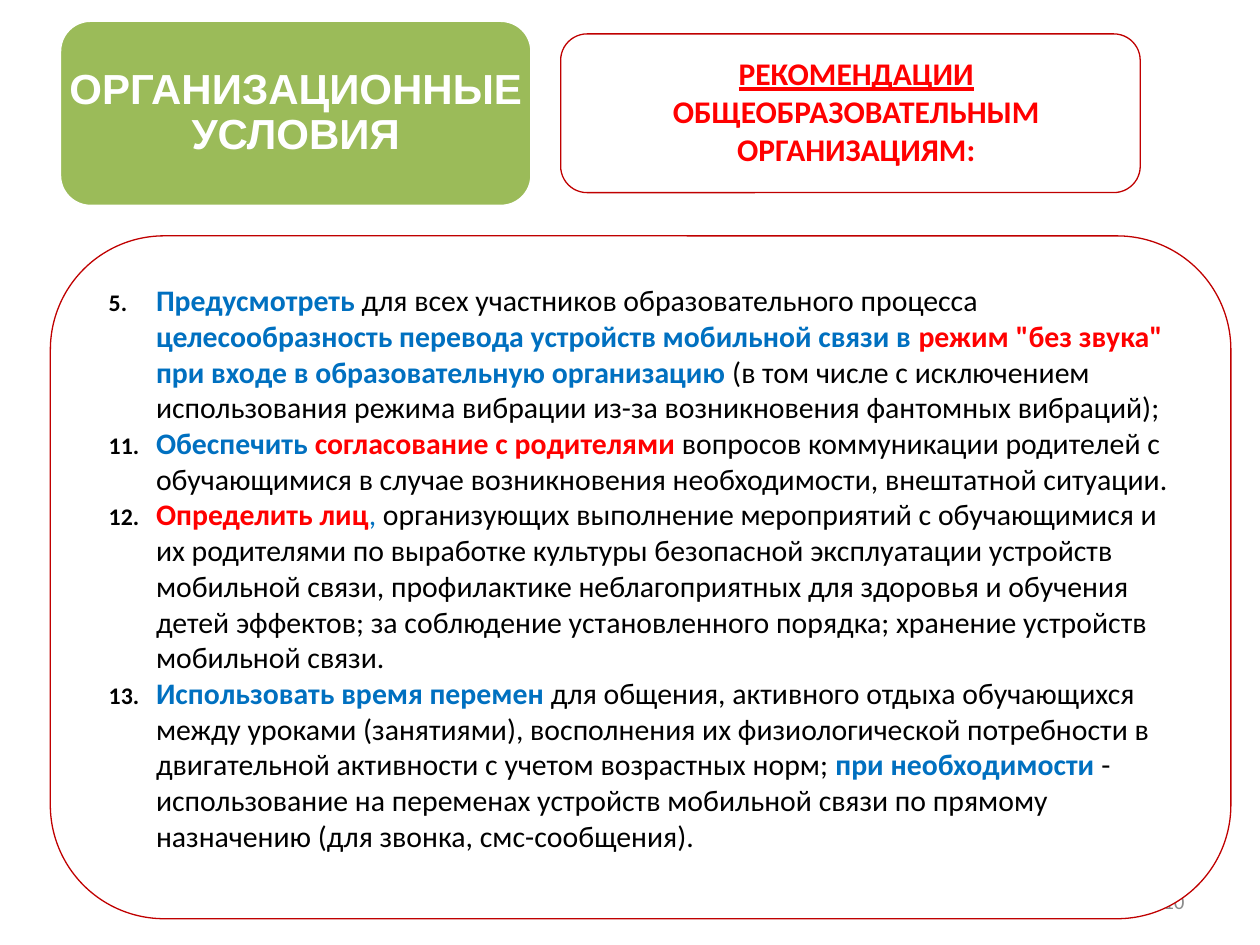
from lxml import etree
from pptx import Presentation
from pptx.dml.color import RGBColor
from pptx.enum import shapes, text
from pptx.oxml import ns
from pptx.util import Pt

COLORS = {"white": "FFFFFF", "green": "9BBB59", "border": "C00000", "red": "FF0000",
          "blue": "0070C0", "black": "000000", "gray": "8B8B8B"}
CORNER = 0.1667
CORNER_INSET = CORNER * 0.29289  # share of the short side lost to rounding
PANEL_MARGINS = (4.3, 7.2, 7.2, 3.6)

# Each item: first number, then (text, colour, bold) runs
RECOMMENDATIONS = [
    (5, [("Предусмотреть ", "blue", True),
         ("для всех участников образовательного процесса ", "black", False),
         ("целесообразность перевода устройств мобильной связи в ", "blue", True),
         ('режим "без звука"', "red", True),
         (" при входе в образовательную организацию ", "blue", True),
         ("(в том числе с исключением использования режима вибрации из-за "
          "возникновения фантомных вибраций);", "black", False)]),
    (11, [("Обеспечить ", "blue", True),
          ("согласование с родителями", "red", True),
          (" вопросов коммуникации родителей с обучающимися в случае возникновения "
           "необходимости, внештатной ситуации.", "black", False)]),
    (12, [("Определить лиц", "red", True),
          (",", "blue", False),
          (" организующих выполнение мероприятий с обучающимися и их родителями по "
           "выработке культуры безопасной эксплуатации устройств мобильной связи, "
           "профилактике неблагоприятных для здоровья и обучения детей эффектов; за "
           "соблюдение установленного порядка; хранение устройств мобильной связи.",
           "black", False)]),
    (12, [("Использовать время перемен ", "blue", True),
          ("для общения, активного отдыха обучающихся между уроками (занятиями), "
           "восполнения их физиологической потребности в двигательной активности с "
           "учетом возрастных норм; ", "black", False),
          ("при необходимости ", "blue", True),
          ("- использование на переменах устройств мобильной связи по прямому "
           "назначению (для звонка, смс-сообщения).", "black", False)]),
]


def rgb(color):
    return RGBColor.from_string(COLORS[color])


def apply(target, formats):
    for name, value in formats.items():
        setattr(target, name, value)


def set_frame(frame, margins, anchor):
    left, top, right, bottom = map(Pt, margins)
    apply(frame, {"margin_left": left, "margin_top": top, "margin_right": right,
                  "margin_bottom": bottom, "vertical_anchor": anchor,
                  "word_wrap": True, "auto_size": text.MSO_AUTO_SIZE.NONE})


def add_run(paragraph, wording, color, **formats):
    run = paragraph.add_run()
    run.text = wording
    apply(run.font, formats)
    run.font.color.rgb = rgb(color)


def add_panel(slide, box, fill, border, weight):
    panel = slide.shapes.add_shape(shapes.MSO_SHAPE.ROUNDED_RECTANGLE, *map(Pt, box))
    panel.adjustments[0] = CORNER
    panel.shadow.inherit = False
    panel.fill.solid()
    panel.fill.fore_color.rgb = rgb(fill)
    panel.line.color.rgb = rgb(border)
    panel.line.width = Pt(weight)
    return panel


def place_on_top(slide, placeholder, box, inset):
    """Put the placeholder in front, inset on every side of the box."""
    left, top, width, height = box
    apply(placeholder, {"left": Pt(left + inset), "top": Pt(top + inset),
                        "width": Pt(width - 2 * inset), "height": Pt(height - 2 * inset)})
    slide.shapes._spTree.append(placeholder._element)


def number_paragraph(paragraph, start):
    """Number from start; equal starts in a row keep counting."""
    props = paragraph._p.get_or_add_pPr()
    props.set("marL", str(Pt(37)))
    props.set("indent", str(Pt(-27)))
    bullet_color = etree.SubElement(props, ns.qn("a:buClr"))
    etree.SubElement(bullet_color, ns.qn("a:srgbClr"), val=COLORS["black"])
    etree.SubElement(props, ns.qn("a:buSzPct"), val="80000")
    etree.SubElement(props, ns.qn("a:buFont"), typeface="Calibri")
    etree.SubElement(props, ns.qn("a:buAutoNum"), type="arabicPeriod", startAt=str(start))


def add_page_number(slide, box):
    frame = slide.shapes.add_textbox(*map(Pt, box)).text_frame
    set_frame(frame, (7.2, 3.6, 7.2, 3.6), text.MSO_ANCHOR.MIDDLE)
    paragraph = frame.paragraphs[0]
    paragraph.alignment = text.PP_ALIGN.RIGHT
    add_run(paragraph, "10", "gray", name="Calibri", size=Pt(12))


def add_topic(slide, box):
    add_panel(slide, box, "green", "white", 2)
    title = slide.shapes.title
    place_on_top(slide, title, box, 3.6)
    set_frame(title.text_frame, (0.7,) * 4, text.MSO_ANCHOR.MIDDLE)
    paragraph = title.text_frame.paragraphs[0]
    apply(paragraph, {"alignment": text.PP_ALIGN.CENTER, "line_spacing": 0.9,
                      "space_after": Pt(8.4)})
    add_run(paragraph, "ОРГАНИЗАЦИОННЫЕ УСЛОВИЯ", "white",
            name="Arial", size=Pt(24), bold=True)


def add_audience(slide, box):
    frame = add_panel(slide, box, "white", "border", 0.75).text_frame
    set_frame(frame, PANEL_MARGINS, text.MSO_ANCHOR.TOP)
    paragraph = frame.paragraphs[0]
    paragraph.alignment = text.PP_ALIGN.CENTER
    paragraph._p.get_or_add_pPr().set("marL", str(Pt(9.4)))
    formats = {"name": "Calibri", "size": Pt(18), "bold": True}
    add_run(paragraph, "РЕКОМЕНДАЦИИ", "red", underline=True, **formats)
    add_run(paragraph, " ОБЩЕОБРАЗОВАТЕЛЬНЫМ ОРГАНИЗАЦИЯМ:", "red", **formats)


def add_recommendations(slide, box):
    add_panel(slide, box, "white", "border", 0.75)
    body = slide.placeholders[1]
    place_on_top(slide, body, box, CORNER_INSET * min(box[2:]))
    frame = body.text_frame
    set_frame(frame, PANEL_MARGINS, text.MSO_ANCHOR.TOP)
    for index, (start, runs) in enumerate(RECOMMENDATIONS):
        paragraph = frame.add_paragraph() if index else frame.paragraphs[0]
        apply(paragraph, {"alignment": text.PP_ALIGN.LEFT, "space_before": Pt(0)})
        number_paragraph(paragraph, start)
        for wording, color, bold in runs:
            add_run(paragraph, wording, color, name="Calibri", size=Pt(17), bold=bold)


def main():
    deck = Presentation()
    apply(deck, {"slide_width": Pt(720), "slide_height": Pt(540)})
    slide = deck.slides.add_slide(deck.slide_layouts[1])
    add_page_number(slide, (516, 500.5, 168, 28.75))
    add_audience(slide, (320.4, 19.4, 331.2, 90.7))
    add_recommendations(slide, (28.8, 134.8, 674.6, 390.2))
    add_topic(slide, (34, 11.6, 270, 106.4))
    deck.save("out.pptx")


if __name__ == "__main__":
    main()
